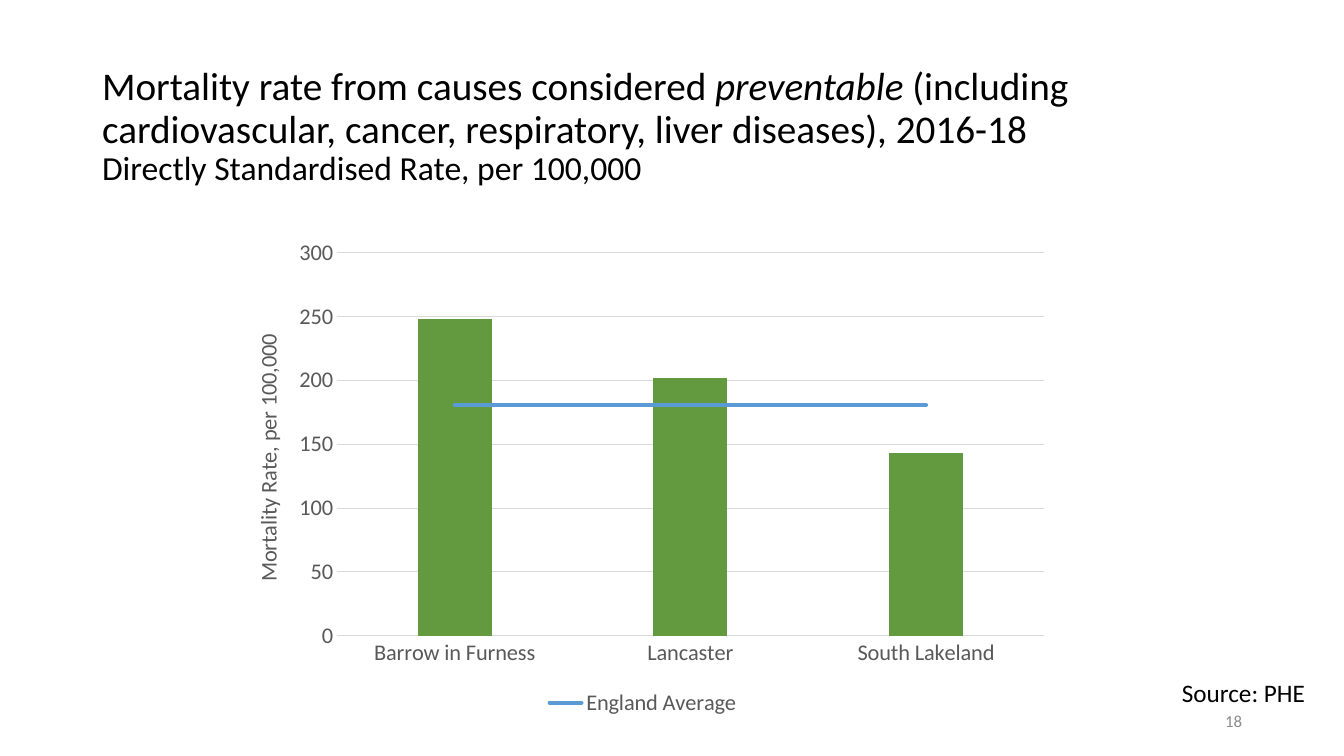
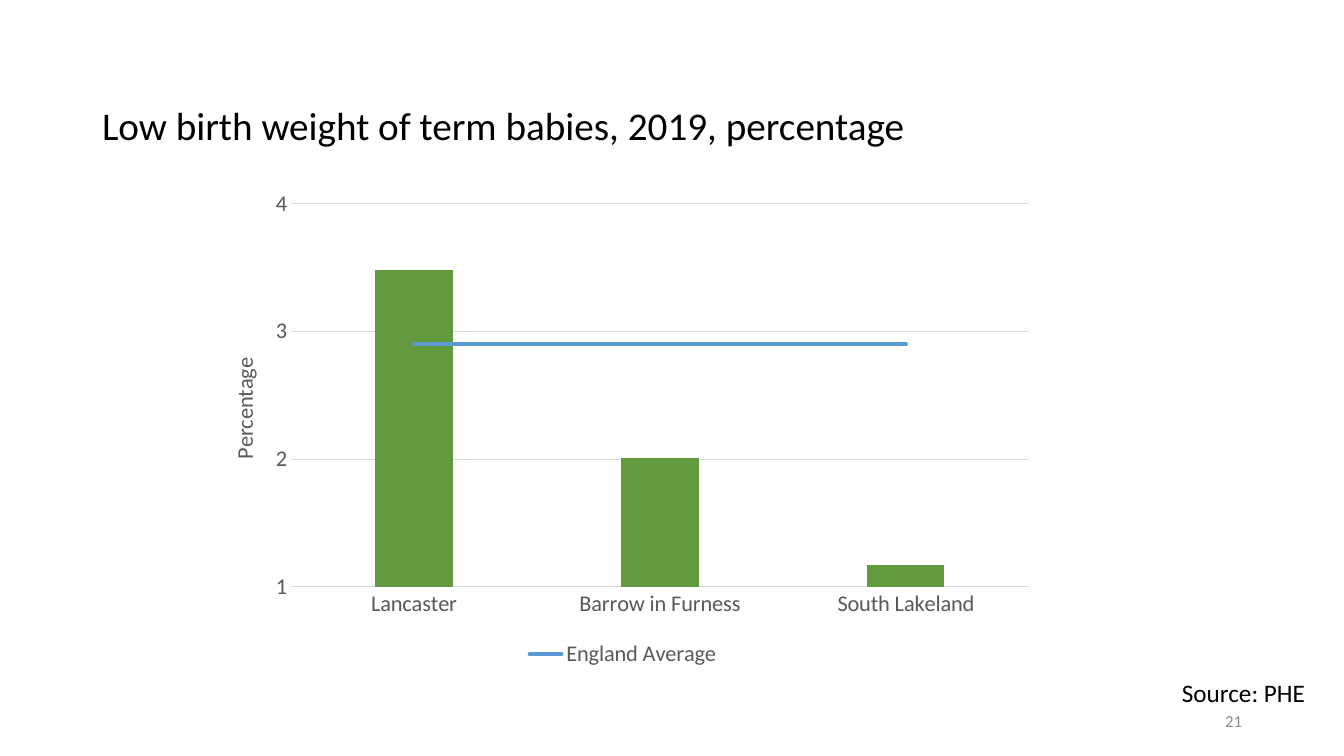
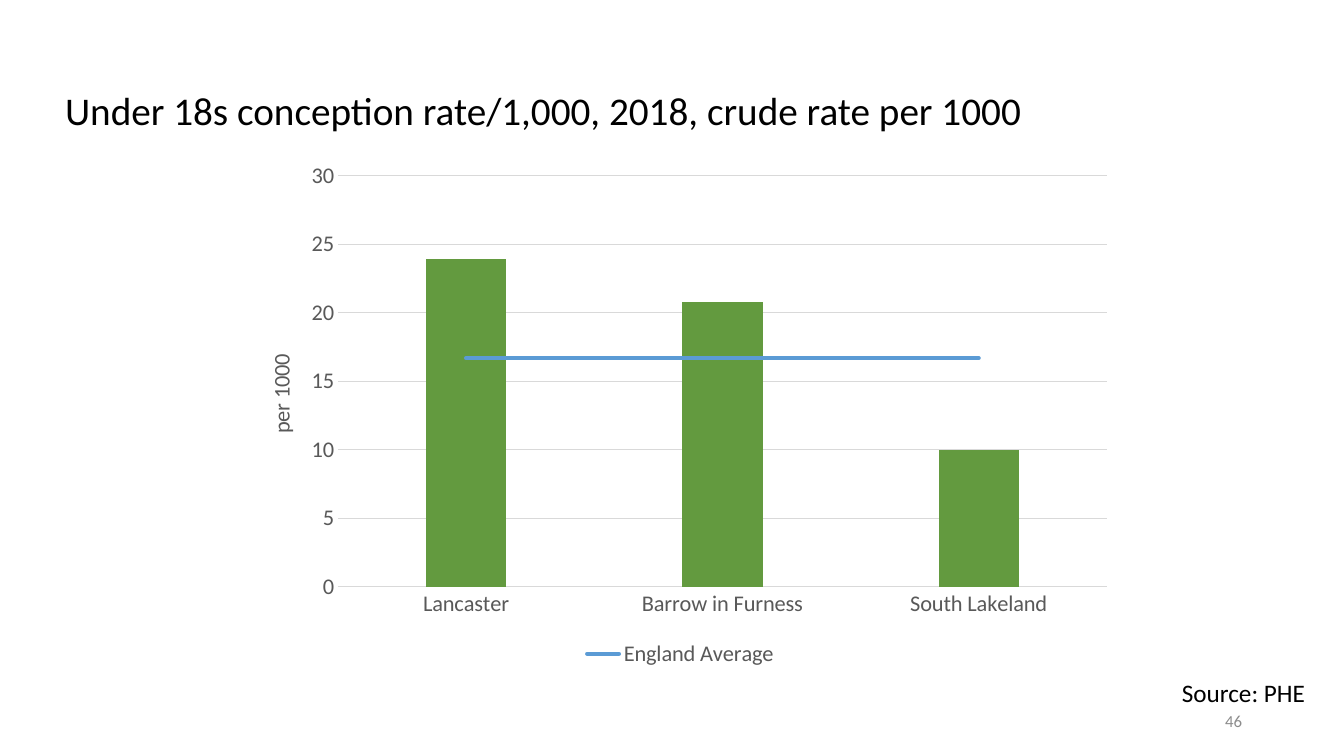
from dataclasses import dataclass

from pptx import Presentation
from pptx.chart.data import CategoryChartData
from pptx.dml.color import RGBColor
from pptx.enum.chart import XL_CHART_TYPE, XL_LEGEND_POSITION, XL_MARKER_STYLE, XL_TICK_MARK
from pptx.enum.text import MSO_ANCHOR, MSO_AUTO_SIZE, PP_ALIGN
from pptx.oxml import parse_xml
from pptx.oxml.ns import nsdecls
from pptx.util import Emu, Pt


@dataclass(frozen=True)
class Theme:
    font: str = "Calibri"
    text: str = "000000"
    muted: str = "8C8C8C"
    axis: str = "595959"
    grid: str = "D9D9D9"
    bar: str = "639A3F"
    average: str = "5B9BD5"
    title_size: int = 28
    subtitle_size: int = 24
    source_size: int = 18
    chart_size: int = 16
    number_size: int = 12
    grid_width: float = 0.75
    average_width: int = 3


THEME = Theme()


def px(length):
    return Emu(round(length * 914400 / 100.8))


def set_font(font, size, color, italic=None):
    font.name = THEME.font
    font.size = Pt(size)
    font.bold = False
    font.italic = italic
    font.color.rgb = RGBColor.from_string(color)


def set_line(line, color, width):
    line.color.rgb = RGBColor.from_string(color)
    line.width = Pt(width)


def write(paragraph, text, *, size, color=THEME.text, italic=None, align=PP_ALIGN.LEFT):
    run = paragraph.add_run()
    run.text = text
    set_font(run.font, size, color, italic)
    paragraph.alignment = align


def set_layout(parent, index, target="", **fractions):
    for layout in parent.xpath("c:layout"):
        parent.remove(layout)
    modes = "".join(f'<c:{axis}Mode val="edge"/>' for axis in "xy")
    values = "".join(f'<c:{name} val="{value:.4f}"/>' for name, value in fractions.items())
    parent.insert(index, parse_xml(
        f'<c:layout {nsdecls("c")}><c:manualLayout>{target}{modes}{values}'
        '</c:manualLayout></c:layout>'))


class Deck:
    def __init__(self):
        self.presentation = Presentation()
        self.presentation.slide_width = px(1344)
        self.presentation.slide_height = px(756)
        self.slide = None

    def new_slide(self, number):
        self.slide = self.presentation.slides.add_slide(self.presentation.slide_layouts[5])
        self.label(number, (950, 701, 302, 40), size=THEME.number_size,
                   color=THEME.muted, anchor=MSO_ANCHOR.MIDDLE)
        self.label("Source: PHE", (1125, 672, 190, 40), size=THEME.source_size)

    def label(self, text, box, *, anchor=MSO_ANCHOR.TOP, **style):
        frame = self.slide.shapes.add_textbox(*map(px, box)).text_frame
        frame.word_wrap = True
        frame.vertical_anchor = anchor
        write(frame.paragraphs[0], text, align=PP_ALIGN.RIGHT, **style)

    def title(self, parts, left=92, top=73, subtitle=None):
        shape = self.slide.shapes.title
        shape.left, shape.top, shape.width, shape.height = map(px, (left, top, 1159, 109))
        frame = shape.text_frame
        frame.word_wrap = True
        frame.auto_size = MSO_AUTO_SIZE.NONE
        frame.vertical_anchor = MSO_ANCHOR.MIDDLE
        paragraph = frame.paragraphs[0]
        paragraph.line_spacing = 0.9
        for text, italic in parts:
            write(paragraph, text, size=THEME.title_size, italic=italic)
        if subtitle:
            paragraph.add_line_break()
            write(paragraph, subtitle, size=THEME.subtitle_size)

    def chart(self, rates, average, *, box, plot, axis_title, title_at, scale):
        data = CategoryChartData()
        data.categories = list(rates)
        data.add_series("Series 1", list(rates.values()))
        data.add_series("England Average", [average] * len(rates))
        chart = self.slide.shapes.add_chart(
            XL_CHART_TYPE.COLUMN_CLUSTERED, *map(px, box), data).chart
        chart.has_title = False
        set_font(chart.font, THEME.chart_size, THEME.axis)

        left, top, width, height = box
        plot_left, plot_top, plot_width, plot_height = plot
        set_layout(chart.element.xpath("c:chart/c:plotArea")[0], 0,
                   '<c:layoutTarget val="inner"/>',
                   x=(plot_left - left) / width, y=(plot_top - top) / height,
                   w=plot_width / width, h=plot_height / height)
        self.series(chart)
        self.axes(chart, axis_title, scale)
        title_left, title_top = title_at
        set_layout(chart.value_axis.axis_title.element, 1,
                   x=(title_left - left) / width, y=(title_top - top) / height)
        self.legend(chart)

    def series(self, chart):
        bars = chart.plots[0]
        bars.gap_width = 219
        bars.overlap = -27
        bars.vary_by_categories = False
        fill = bars.series[0].format.fill
        fill.solid()
        fill.fore_color.rgb = RGBColor.from_string(THEME.bar)

        bar_chart = chart.element.xpath(".//c:barChart")[0]
        average = bar_chart.xpath("c:ser")[1]
        for flag in average.xpath("c:invertIfNegative"):
            average.remove(flag)
        axis_ids = "".join(f'<c:axId val="{axis.get("val")}"/>'
                           for axis in bar_chart.xpath("c:axId"))
        line_chart = parse_xml(
            f'<c:lineChart {nsdecls("c")}><c:grouping val="standard"/>'
            f'<c:varyColors val="0"/><c:marker val="1"/>{axis_ids}</c:lineChart>')
        line_chart.insert(2, average)
        bar_chart.addnext(line_chart)

        line = chart.plots[1].series[0]
        line.smooth = False
        line.marker.style = XL_MARKER_STYLE.NONE
        set_line(line.format.line, THEME.average, THEME.average_width)
        average.xpath("c:spPr/a:ln")[0].set("cap", "rnd")

    def axes(self, chart, axis_title, scale):
        for axis in (chart.category_axis, chart.value_axis):
            axis.major_tick_mark = axis.minor_tick_mark = XL_TICK_MARK.NONE
            set_font(axis.tick_labels.font, THEME.chart_size, THEME.axis)
        set_line(chart.category_axis.format.line, THEME.grid, THEME.grid_width)
        values = chart.value_axis
        values.format.line.fill.background()
        values.minimum_scale, values.maximum_scale, values.major_unit = scale
        values.tick_labels.number_format = "0"
        values.tick_labels.number_format_is_linked = False
        set_line(values.major_gridlines.format.line, THEME.grid, THEME.grid_width)
        frame = values.axis_title.text_frame
        write(frame.paragraphs[0], axis_title, size=THEME.chart_size,
              color=THEME.axis, align=PP_ALIGN.CENTER)
        body = values.axis_title.element.xpath("c:tx/c:rich/a:bodyPr")[0]
        body.set("rot", "-5400000")
        body.set("vert", "horz")

    def legend(self, chart):
        chart.has_legend = True
        legend = chart.legend
        legend.position = XL_LEGEND_POSITION.BOTTOM
        legend.include_in_layout = False
        set_font(legend.font, THEME.chart_size, THEME.axis)
        legend_position = chart.element.xpath(".//c:legend/c:legendPos")[0]
        legend_position.addnext(parse_xml(
            f'<c:legendEntry {nsdecls("c")}><c:idx val="0"/><c:delete val="1"/></c:legendEntry>'))


def main():
    deck = Deck()

    deck.new_slide("18")
    deck.title([("Mortality rate from causes considered ", None),
                ("preventable ", True),
                ("(including cardiovascular, cancer, respiratory, liver diseases), 2016-18", None)],
               subtitle="Directly Standardised Rate, per 100,000")
    deck.chart({"Barrow in Furness": 248, "Lancaster": 202, "South Lakeland": 143}, 181,
               box=(224, 230, 838, 491), plot=(337, 253, 707, 383),
               axis_title="Mortality Rate, per 100,000", title_at=(249, 330),
               scale=(0, 300, 50))

    deck.new_slide("21")
    deck.title([("Low birth weight of term babies, 2019, percentage", None)])
    deck.chart({"Lancaster": 3.48, "Barrow in Furness": 2.01, "South Lakeland": 1.17}, 2.9,
               box=(200, 181, 846, 491), plot=(291, 204, 738, 383),
               axis_title="Percentage", title_at=(225, 354), scale=(1, 4, 1))

    deck.new_slide("46")
    deck.title([("Under 18s conception rate/1,000, 2018, crude rate per 1000", None)],
               left=55, top=58)
    deck.chart({"Lancaster": 23.9, "Barrow in Furness": 20.8, "South Lakeland": 10}, 16.7,
               box=(236, 152, 889, 520), plot=(338, 176, 769, 411),
               axis_title="per 1000", title_at=(262, 350), scale=(0, 30, 5))

    deck.presentation.save("out.pptx")


if __name__ == "__main__":
    main()
